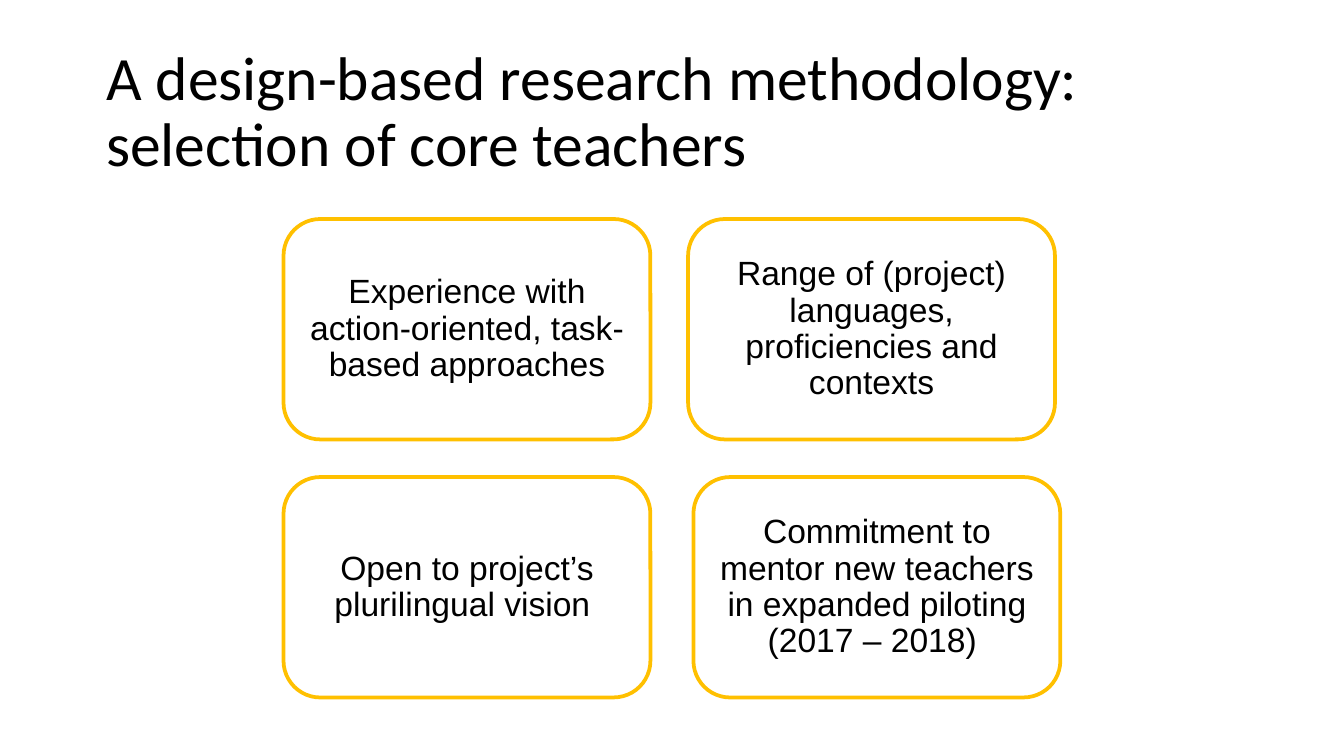
from pptx import Presentation
from pptx.dml.color import RGBColor
from pptx.enum.shapes import MSO_SHAPE
from pptx.enum.text import MSO_ANCHOR, PP_ALIGN
from pptx.util import Inches, Pt

BLACK = "000000"
WHITE = "FFFFFF"
GOLD = "FFC000"
CARD_WIDTH, CARD_HEIGHT = 2.73, 1.64
LABEL_GAP = 0.08
ROUNDED = MSO_SHAPE.ROUNDED_RECTANGLE
PROCESS = MSO_SHAPE.FLOWCHART_ALTERNATE_PROCESS

CRITERIA = [
    (2.11, 1.63, PROCESS, WHITE, "Experience with action-oriented, task-based approaches"),
    (5.12, 1.63, ROUNDED, WHITE, "Range of (project) languages, proficiencies and contexts"),
    (2.11, 3.55, ROUNDED, WHITE, "Open to project’s plurilingual vision "),
    (5.16, 3.55, ROUNDED, None, "Commitment to mentor new teachers in expanded piloting (2017 – 2018) "),
]


def color(hex_value):
    return RGBColor.from_string(hex_value)


def write_text(frame, text, font, size, align, inset):
    frame.word_wrap = True
    frame.vertical_anchor = MSO_ANCHOR.MIDDLE
    frame.margin_left = frame.margin_right = Inches(inset)
    frame.margin_top = frame.margin_bottom = Inches(inset)
    paragraph = frame.paragraphs[0]
    paragraph.alignment = align
    paragraph.line_spacing = 0.9
    run = paragraph.add_run()
    run.text = text
    run.font.name = font
    run.font.size = Pt(size)
    run.font.color.rgb = color(BLACK)


def add_title(slide, text):
    title = slide.shapes.title
    title.left, title.top = Inches(0.69), Inches(0.3)
    title.width, title.height = Inches(8.62), Inches(1.09)
    write_text(title.text_frame, text, "Calibri", 33, PP_ALIGN.LEFT, 0.1)


def add_card(group, left, top, outline, fill):
    card = group.shapes.add_shape(
        outline, Inches(left), Inches(top), Inches(CARD_WIDTH), Inches(CARD_HEIGHT)
    )
    card.shadow.inherit = False
    if fill:
        card.fill.solid()
        card.fill.fore_color.rgb = color(fill)
    else:
        card.fill.background()
    card.line.color.rgb = color(GOLD)
    card.line.width = Pt(2)


def add_label(group, left, top, text):
    label = group.shapes.add_textbox(
        Inches(left + LABEL_GAP),
        Inches(top + LABEL_GAP),
        Inches(CARD_WIDTH - 2 * LABEL_GAP),
        Inches(CARD_HEIGHT - 2 * LABEL_GAP),
    )
    write_text(label.text_frame, text, "Arial", 18, PP_ALIGN.CENTER, 0.07)


def main():
    presentation = Presentation()
    presentation.slide_width = Inches(10)
    presentation.slide_height = Inches(10) * 9 // 16
    slide = presentation.slides.add_slide(presentation.slide_layouts[5])
    slide.background.fill.solid()
    slide.background.fill.fore_color.rgb = color(WHITE)
    add_title(slide, "A design-based research methodology: selection of core teachers")
    criteria_group = slide.shapes.add_group_shape()
    for left, top, outline, fill, text in CRITERIA:
        add_card(criteria_group, left, top, outline, fill)
        add_label(criteria_group, left, top, text)
    presentation.save("out.pptx")


if __name__ == "__main__":
    main()
